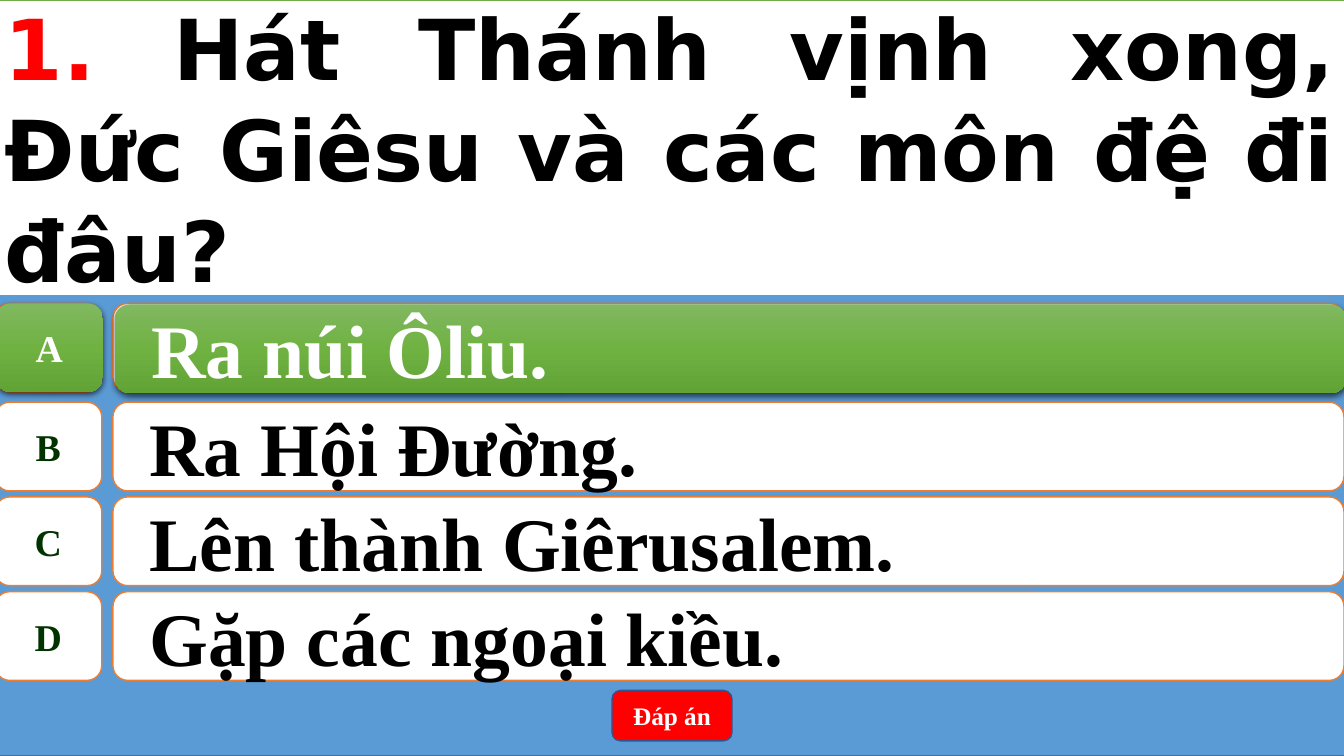
"""Build a quiz slide with one question, four answers and a revealed solution."""
import pptx
import pptx.dml.color
import pptx.enum.shapes
import pptx.enum.text
import pptx.oxml
import pptx.oxml.ns
import pptx.util
from lxml import etree

SLIDE_WIDTH, SLIDE_HEIGHT = 13.33, 7.5
LEFT_EDGE, FULL_WIDTH = -0.05, 13.39
LETTER_WIDTH, ANSWER_LEFT, ANSWER_WIDTH = 1.06, 1.12, 12.21
ROW_TOP, ROW_PITCH, ROW_HEIGHT = 3.05, 0.94, 0.88
FIRST_ROW_LIFT = 0.04
SERIF, SANS = "Times New Roman", "DejaVu Sans"
ANSWERS = [
    ("A", "Ra núi Ôliu."),
    ("B", "Ra Hội Đường."),
    ("C", "Lên thành Giêrusalem."),
    ("D", "Gặp các ngoại kiều."),
]
GREEN_STOPS = [(0, "81B861"), (50, "6FB242"), (100, "62A336")]
SHAPES = pptx.enum.shapes.MSO_SHAPE
ALIGN = pptx.enum.text.PP_ALIGN


def rgb(value):
    """Turn a hex string into a colour."""
    return pptx.dml.color.RGBColor.from_string(value)


def add_panel(slide, kind, box, fill=None, outline=None):
    """Add a preset shape with a flat fill and a thin outline."""
    panel = slide.shapes.add_shape(kind, *(pptx.util.Inches(side) for side in box))
    panel.shadow.inherit = False
    if fill:
        panel.fill.solid()
        panel.fill.fore_color.rgb = rgb(fill)
    if outline:
        panel.line.color.rgb = rgb(outline)
        panel.line.width = pptx.util.Pt(1)
    else:
        panel.line.fill.background()
    return panel


def write(panel, runs, size, font, align, wrap=True):
    """Write bold coloured runs into a panel and return the paragraph."""
    frame = panel.text_frame
    frame.word_wrap = wrap
    frame.vertical_anchor = pptx.enum.text.MSO_ANCHOR.MIDDLE
    paragraph = frame.paragraphs[0]
    paragraph.alignment = align
    for text, color in runs:
        run = paragraph.add_run()
        run.text = text
        run.font.name = font
        run.font.size = pptx.util.Pt(size)
        run.font.bold = True
        run.font.color.rgb = rgb(color)
    return paragraph


def make_glossy(panel):
    """Give a panel the green gradient and a soft shadow below."""
    qn = pptx.oxml.ns.qn
    panel.fill.gradient()
    panel.fill.gradient_angle = 270
    properties = panel.element.spPr
    stops = properties.find(".//" + qn("a:gsLst"))
    for stop in list(stops):
        stops.remove(stop)
    for position, color in GREEN_STOPS:
        stop = etree.SubElement(stops, qn("a:gs"), pos=str(position * 1000))
        etree.SubElement(stop, qn("a:srgbClr"), val=color)
    shadow = etree.SubElement(
        properties.find(qn("a:effectLst")), qn("a:outerShdw"),
        blurRad=str(pptx.util.Pt(4.5)), dist=str(pptx.util.Pt(1.5)),
        dir="5400000", algn="ctr", rotWithShape="0")
    tint = etree.SubElement(shadow, qn("a:srgbClr"), val="000000")
    etree.SubElement(tint, qn("a:alpha"), val="63000")


def add_answer(slide, row, correct=False):
    """Add the letter tile and the answer bar of one row."""
    letter, answer = ANSWERS[row]
    top = ROW_TOP + row * ROW_PITCH - (FIRST_ROW_LIFT if row == 0 else 0)
    nudge = 0.01 if correct else 0
    fill, outline = (None, None) if correct else ("FFFFFF", "ED7D31")
    tile = add_panel(slide, SHAPES.FLOWCHART_ALTERNATE_PROCESS,
                     (LEFT_EDGE + nudge, top, LETTER_WIDTH, ROW_HEIGHT), fill, outline)
    bar = add_panel(slide, SHAPES.ROUNDED_RECTANGLE,
                    (ANSWER_LEFT + 2 * nudge, top + nudge, ANSWER_WIDTH, ROW_HEIGHT),
                    fill, outline)
    if correct:
        make_glossy(tile)
        make_glossy(bar)
    write(tile, [(letter, "FFFFFF" if correct else "003300")], 27, SERIF,
          ALIGN.CENTER, wrap=False)
    line = write(bar, [(answer, "FFFFFF" if correct else "000000")], 54, SERIF, ALIGN.LEFT)
    line.level = 1
    indents = line._p.get_or_add_pPr()
    indents.set("marL", str(pptx.util.Inches(0.5)))
    indents.set("indent", str(pptx.util.Inches(-0.28)))


def main():
    """Build and save the slide."""
    deck = pptx.Presentation()
    deck.slide_width = pptx.util.Inches(SLIDE_WIDTH)
    deck.slide_height = pptx.util.Inches(SLIDE_HEIGHT)
    slide = deck.slides.add_slide(deck.slide_layouts[6])

    add_panel(slide, SHAPES.RECTANGLE, (LEFT_EDGE, 0, FULL_WIDTH, SLIDE_HEIGHT),
              "5B9BD5", "43739E")
    for row in range(len(ANSWERS)):
        add_answer(slide, row)
    button = add_panel(slide, SHAPES.ROUNDED_RECTANGLE, (6.07, 6.85, 1.19, 0.5),
                       "FF0000", "325491")
    write(button, [("Đáp án", "FFFFFF")], 18, SERIF, ALIGN.CENTER)
    add_answer(slide, 0, correct=True)
    question = add_panel(slide, SHAPES.RECTANGLE, (LEFT_EDGE, 0, FULL_WIDTH, 2.93),
                         "FFFFFF", "70AD47")
    write(question,
          [("1. ", "FF0000"),
           ("Hát Thánh vịnh xong, Đức Giêsu và các môn đệ đi đâu?", "000000")],
          60, SANS, ALIGN.JUSTIFY)
    deck.save("out.pptx")


if __name__ == "__main__":
    main()
